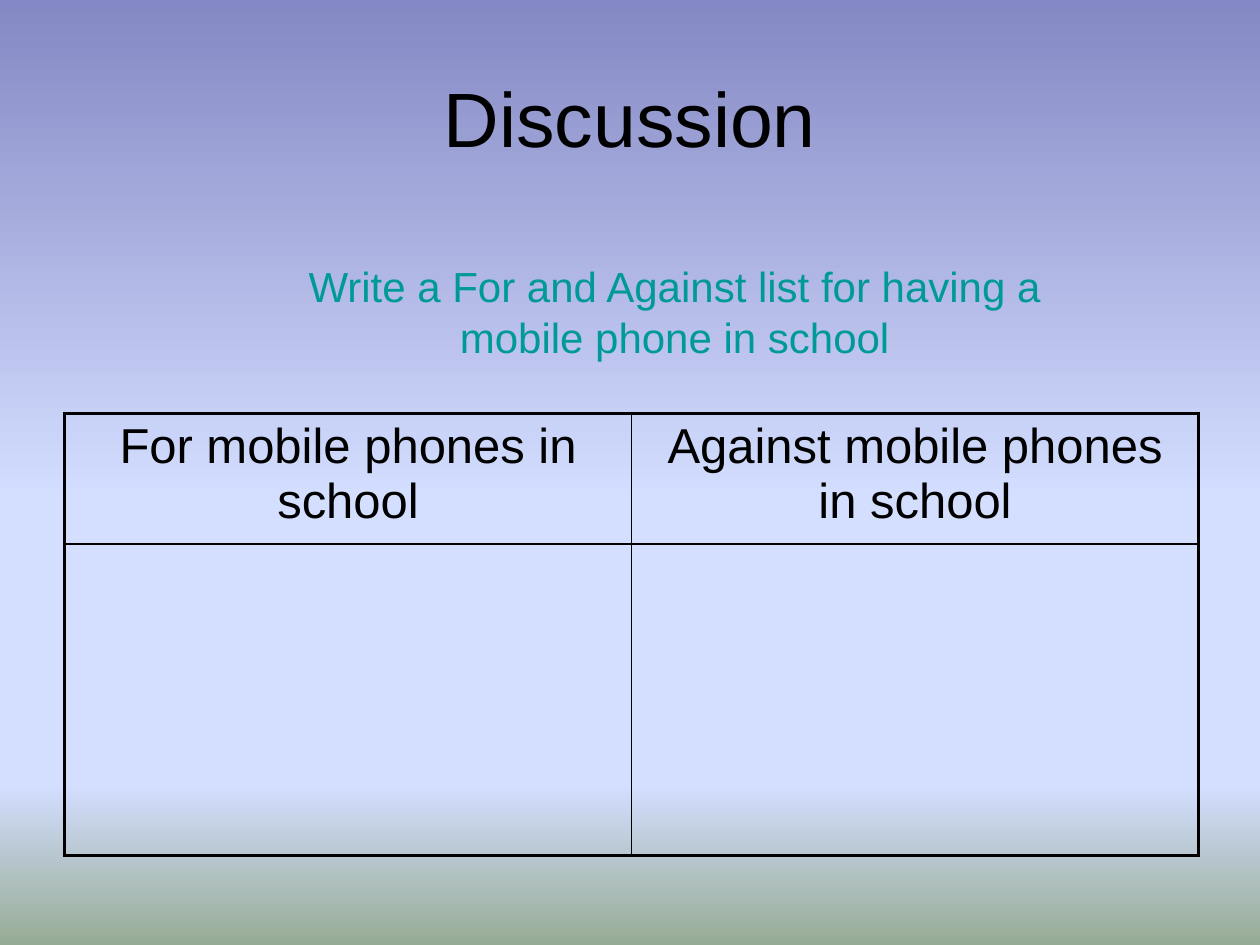
from copy import deepcopy
from dataclasses import dataclass

from lxml import etree
from pptx import Presentation, util as u
from pptx.dml.color import RGBColor
from pptx.enum import text
from pptx.oxml.ns import qn


@dataclass(frozen=True)
class Theme:
    font: str = "Arial"
    ink: str = "000000"
    accent: str = "009999"
    title_size: int = 44
    prompt_size: int = 24
    heading_size: int = 28
    outer_line: float = 2.25
    inner_line: float = 1
    sky: tuple = ((0, "8488C4"), (0.53, "D4DEFF"), (0.83, "D4DEFF"), (1, "96AB94"))


class SlideBuilder:
    def __init__(self, slide, theme):
        self.slide = slide
        self.theme = theme

    def background(self):
        fill = self.slide.background.fill
        fill.gradient()
        fill.gradient_angle = 270
        stops = self.slide.element.find(".//" + qn("a:gsLst"))
        while len(stops) < len(self.theme.sky):
            stops.append(deepcopy(stops[0]))
        for stop, (position, colour) in zip(fill.gradient_stops, self.theme.sky):
            stop.position = position
            stop.color.rgb = RGBColor.from_string(colour)

    def centred_text(self, frame, wording, size, colour):
        frame.word_wrap = True
        paragraph = frame.paragraphs[0]
        paragraph.alignment = text.PP_ALIGN.CENTER
        run = paragraph.add_run()
        run.text = wording
        run.font.color.rgb = RGBColor.from_string(colour)
        for name, value in {"name": self.theme.font, "size": u.Pt(size)}.items():
            setattr(run.font, name, value)

    def text_box(self, wording, bounds, size, colour, anchor=text.MSO_ANCHOR.TOP):
        box = self.slide.shapes.add_textbox(*map(u.Cm, bounds))
        box.text_frame.vertical_anchor = anchor
        self.centred_text(box.text_frame, wording, size, colour)

    def border(self, cell, edges):
        properties = cell._tc.get_or_add_tcPr()
        for side, outer in edges.items():
            width = self.theme.outer_line if outer else self.theme.inner_line
            line = etree.SubElement(properties, qn(f"a:ln{side}"), w=str(u.Pt(width)))
            solid = etree.SubElement(line, qn("a:solidFill"))
            etree.SubElement(solid, qn("a:srgbClr"), val=self.theme.ink)

    def table(self, headings, left, top, column_width, row_heights):
        rows, columns = len(row_heights), len(headings)
        size = (column_width * columns, sum(row_heights))
        grid = self.slide.shapes.add_table(
            rows, columns, *map(u.Cm, (left, top, *size))).table
        for name, value in {"first_row": False, "horz_banding": False}.items():
            setattr(grid, name, value)
        for column in grid.columns:
            column.width = u.Cm(column_width)
        for r, height in enumerate(row_heights):
            grid.rows[r].height = u.Cm(height)
            for c in range(columns):
                cell = grid.cell(r, c)
                self.border(cell, {"L": c == 0, "R": c == columns - 1,
                                   "T": r == 0, "B": r == rows - 1})
                cell.fill.background()
        for c, heading in enumerate(headings):
            self.centred_text(grid.cell(0, c).text_frame, heading,
                              self.theme.heading_size, self.theme.ink)


def main():
    deck = Presentation()
    deck.slide_width, deck.slide_height = u.Cm(25.4), u.Cm(19.05)
    theme = Theme()
    builder = SlideBuilder(deck.slides.add_slide(deck.slide_layouts[6]), theme)
    builder.background()
    builder.text_box("Discussion", (1.27, 0.76, 22.86, 3.18),
                     theme.title_size, theme.ink, text.MSO_ANCHOR.MIDDLE)
    builder.text_box("Write a For and Against list for having a mobile phone in school",
                     (5.1, 5.13, 17, 2.29), theme.prompt_size, theme.accent)
    builder.table(("For mobile phones in school", "Against mobile phones in school"),
                  1.3, 8.33, 11.43, (2.64, 6.27))
    deck.save("out.pptx")


if __name__ == "__main__":
    main()
